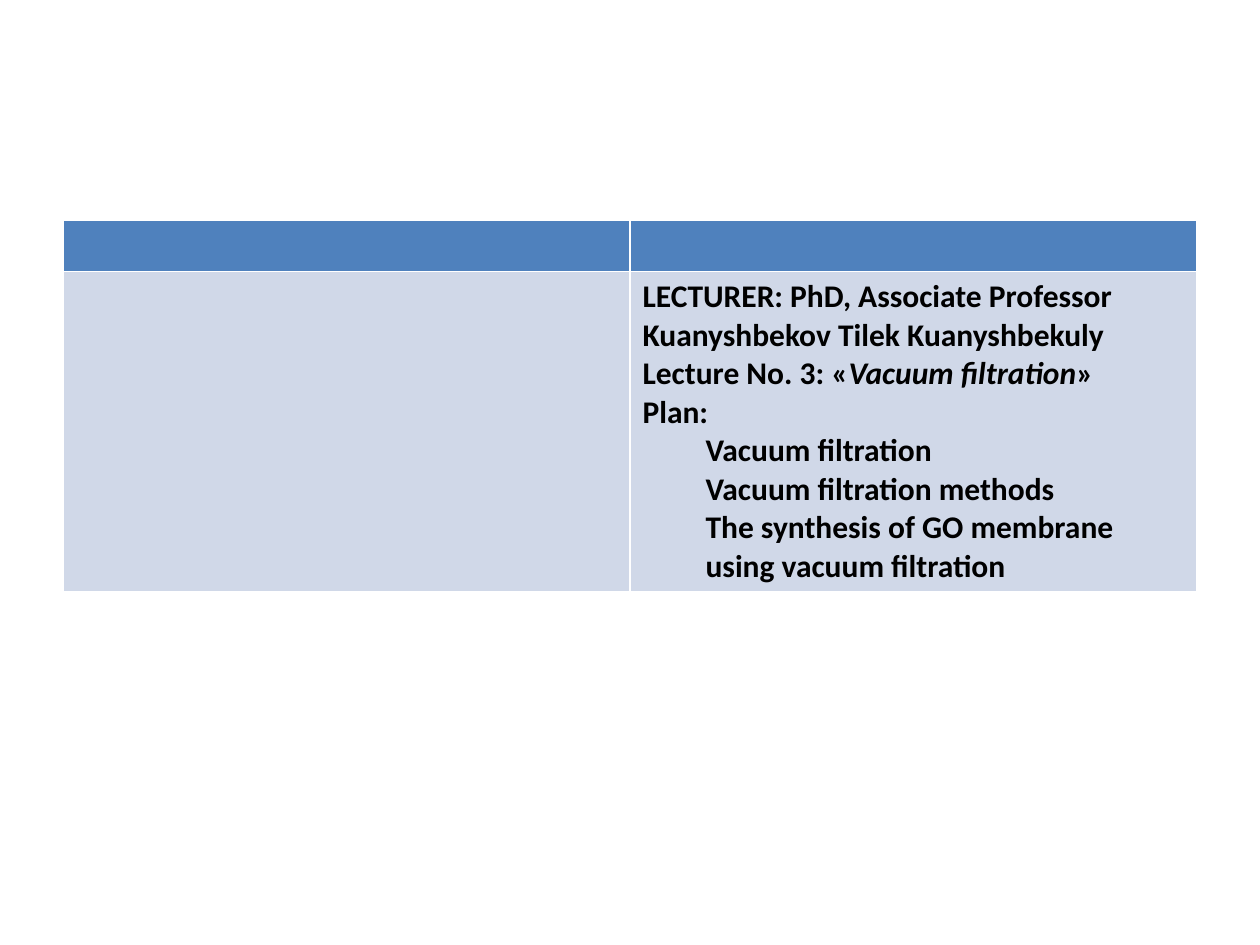
from pptx import Presentation
from pptx.dml.color import RGBColor
from pptx.util import Inches, Pt

BLUE = RGBColor(0x4F, 0x81, 0xBD)
PALE = RGBColor(0xD0, 0xD8, 0xE8)
BLACK = RGBColor(0, 0, 0)

WIDE, HIGH = Inches(10), Inches(7.5)
ROWS = [Inches(0.4), Inches(2.54)]
FILLS = [BLUE, PALE]

INTRO = [
    [("LECTURER: PhD, Associate Professor", False)],
    [("Kuanyshbekov Tilek Kuanyshbekuly", False)],
    [("Lecture No. 3: «", False), ("Vacuum filtration", True), ("»", False)],
    [("Plan:", False)],
]
PLAN = [
    "Vacuum filtration",
    "Vacuum filtration methods",
    "The synthesis of GO membrane using vacuum filtration",
]


def add_text(para, text, size=18, bold=True, italic=False, color=BLACK):
    run = para.add_run()
    run.text = text
    font = run.font
    font.name, font.size = "Calibri", Pt(size)
    font.bold, font.italic = bold, italic
    font.color.rgb = color


def indent(para, left):
    para.level = 1
    props = para._p.get_or_add_pPr()
    props.set("marL", str(left))
    props.set("indent", "0")


def add_grid(slide):
    # The table style draws the white cell borders
    frame = slide.shapes.add_table(len(ROWS), 2, int(WIDE * 0.05), Inches(1.75),
                                   int(WIDE * 0.9), sum(ROWS))
    table = frame.table
    for row, high, color in zip(table.rows, ROWS, FILLS):
        row.height = high
        for cell in row.cells:
            cell.fill.solid()
            cell.fill.fore_color.rgb = color
    return table


def fill_cell(cell):
    frame = cell.text_frame
    items = INTRO + [[(text, False)] for text in PLAN]
    for i, runs in enumerate(items):
        para = frame.add_paragraph() if i else frame.paragraphs[0]
        if i >= len(INTRO):
            indent(para, Inches(0.5))
        for text, slant in runs:
            add_text(para, text, italic=slant)


def main():
    deck = Presentation()
    deck.slide_width, deck.slide_height = WIDE, HIGH
    slide = deck.slides.add_slide(deck.slide_layouts[6])

    # Lecture details and plan in the lower right cell
    table = add_grid(slide)
    fill_cell(table.cell(1, 1))

    deck.save("out.pptx")


if __name__ == "__main__":
    main()
